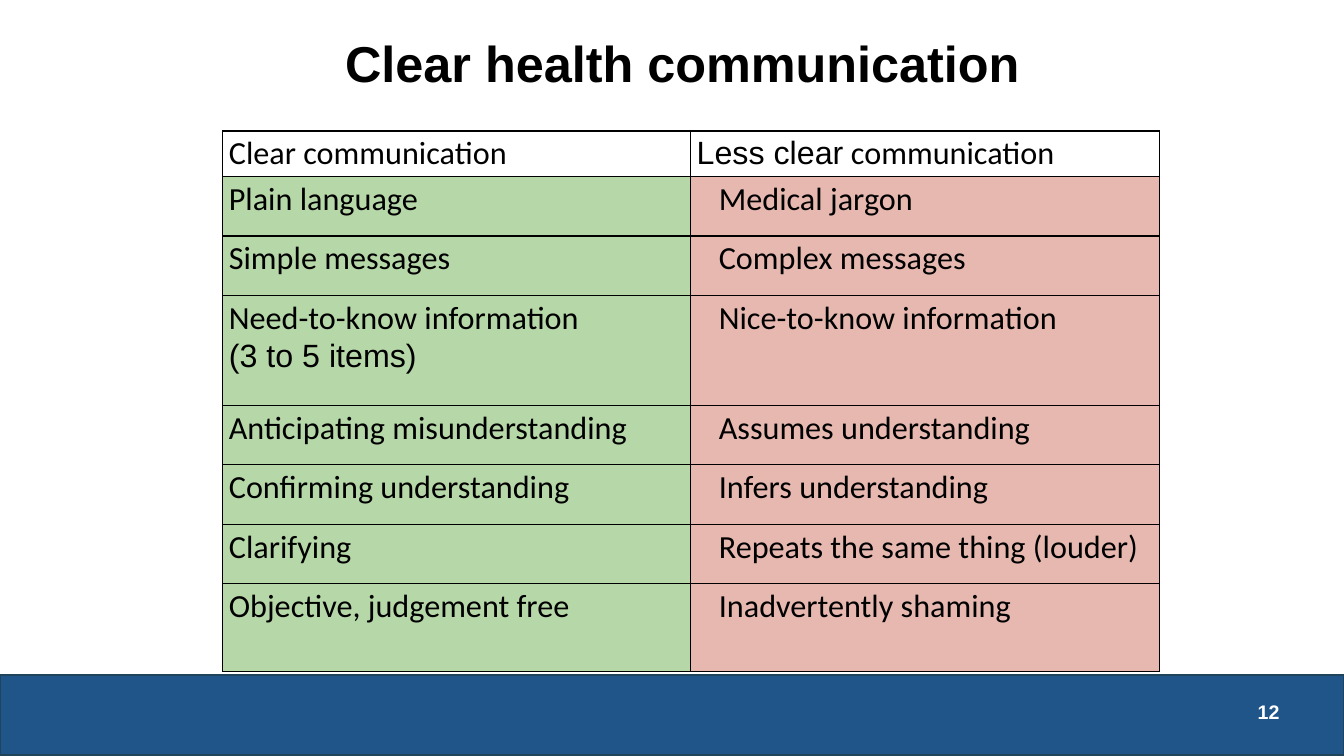
import pptx
import pptx.util
import pptx.dml.color
import pptx.enum.shapes
import pptx.enum.text
import pptx.oxml
import pptx.oxml.ns
from pptx.util import Inches

ALIGN = pptx.enum.text.PP_ALIGN
MIDDLE = pptx.enum.text.MSO_ANCHOR.MIDDLE

BLACK, WHITE = "000000", "FFFFFF"
GREEN, RED = "B6D7A8", "E6B8AF"

# Each cell is a list of paragraphs, each paragraph a list of (text, font)
HEADER = (
    [[("Clear communication", "Calibri")]],
    [[("Less clear", "Arial"), (" communication", "Calibri")]],
)
CLEAR = [
    [[("Plain language", "Calibri")]],
    [[("Simple messages", "Calibri")]],
    [[("Need-to-know information", "Calibri")], [("(3 to 5 items)", "Arial")]],
    [[("Anticipating misunderstanding", "Calibri")]],
    [[("Confirming understanding", "Calibri")]],
    [[("Clarifying", "Calibri")]],
    [[("Objective, judgement free", "Calibri")]],
]
LESS_CLEAR = [
    "Medical jargon",
    "Complex messages",
    "Nice-to-know information",
    "Assumes understanding",
    "Infers understanding",
    "Repeats the same thing (louder)",
    "Inadvertently shaming",
]
COL_WIDTHS = [4.64, 4.65]
ROW_HEIGHTS = [0.44, 0.59, 0.59, 1.09, 0.59, 0.59, 0.59, 0.87]


def rgb(color):
    return pptx.dml.color.RGBColor.from_string(color)


def add_run(p, text, font, size, color, bold=False):
    r = p.add_run()
    r.text = text
    r.font.name = font
    r.font.size = pptx.util.Pt(size)
    r.font.bold = bold
    r.font.color.rgb = rgb(color)


def set_line(shape, text, size, color, align):
    """Write one bold line, centred vertically, in a title or text box."""
    tf = shape.text_frame
    tf.word_wrap = True
    tf.auto_size = pptx.enum.text.MSO_AUTO_SIZE.NONE
    tf.vertical_anchor = MIDDLE
    p = tf.paragraphs[0]
    p.alignment = align
    add_run(p, text, "Arial", size, color, bold=True)
    return p


def set_borders(cell, color, width):
    tc_pr = cell._tc.get_or_add_tcPr()
    for side in ("lnL", "lnR", "lnT", "lnB"):
        tc_pr.append(pptx.oxml.parse_xml(
            f'<a:{side} {pptx.oxml.ns.nsdecls("a")} w="{pptx.util.Pt(width)}">'
            f'<a:solidFill><a:srgbClr val="{color}"/></a:solidFill></a:{side}>'))


def fill_cell(cell, paragraphs, fill=None, indent=0):
    set_borders(cell, BLACK, 1)
    if fill:
        cell.fill.solid()
        cell.fill.fore_color.rgb = rgb(fill)
    else:
        cell.fill.background()
    cell.margin_left = Inches(0.06 + indent)
    cell.margin_right = Inches(0.06)
    cell.margin_top = cell.margin_bottom = Inches(0.03)
    tf = cell.text_frame
    for i, runs in enumerate(paragraphs):
        p = tf.add_paragraph() if i else tf.paragraphs[0]
        for text, font in runs:
            add_run(p, text, font, 23, BLACK)


def add_title(s, text):
    title = s.shapes.title
    title.left, title.top = Inches(2.21), Inches(0.24)
    title.width, title.height = Inches(9.12), Inches(0.84)
    set_line(title, text, 36, BLACK, ALIGN.CENTER).line_spacing = 0.9


def add_comparison(s):
    frame = s.shapes.add_table(
        len(ROW_HEIGHTS), len(COL_WIDTHS), Inches(2.21), Inches(1.3),
        Inches(sum(COL_WIDTHS)), Inches(sum(ROW_HEIGHTS)))
    table = frame.table
    table.first_row = table.horz_banding = False
    for col, width in zip(table.columns, COL_WIDTHS):
        col.width = Inches(width)
    for row, height in zip(table.rows, ROW_HEIGHTS):
        row.height = Inches(height)
    for col, paragraphs in enumerate(HEADER):
        fill_cell(table.cell(0, col), paragraphs)
    for row, (clear, less_clear) in enumerate(zip(CLEAR, LESS_CLEAR), 1):
        fill_cell(table.cell(row, 0), clear, GREEN)
        fill_cell(table.cell(row, 1), [[(less_clear, "Calibri")]], RED, 0.22)


def add_footer(s, number):
    band = s.shapes.add_shape(
        pptx.enum.shapes.MSO_SHAPE.RECTANGLE,
        Inches(0), Inches(6.7), Inches(13.33), Inches(0.79))
    band.shadow.inherit = False
    band.fill.solid()
    band.fill.fore_color.rgb = rgb("20558A")
    band.line.color.rgb = rgb("20455A")
    band.line.width = pptx.util.Pt(1.5)
    box = s.shapes.add_textbox(
        Inches(10.92), Inches(6.86), Inches(1.87), Inches(0.4))
    set_line(box, number, 14, WHITE, ALIGN.RIGHT)


def main():
    prs = pptx.Presentation()
    prs.slide_width, prs.slide_height = Inches(13.33), Inches(7.5)
    s = prs.slides.add_slide(prs.slide_layouts[5])  # title only
    s.background.fill.solid()
    s.background.fill.fore_color.rgb = rgb(WHITE)

    add_footer(s, "12")
    add_title(s, "Clear health communication")
    add_comparison(s)
    prs.save("out.pptx")


if __name__ == "__main__":
    main()
